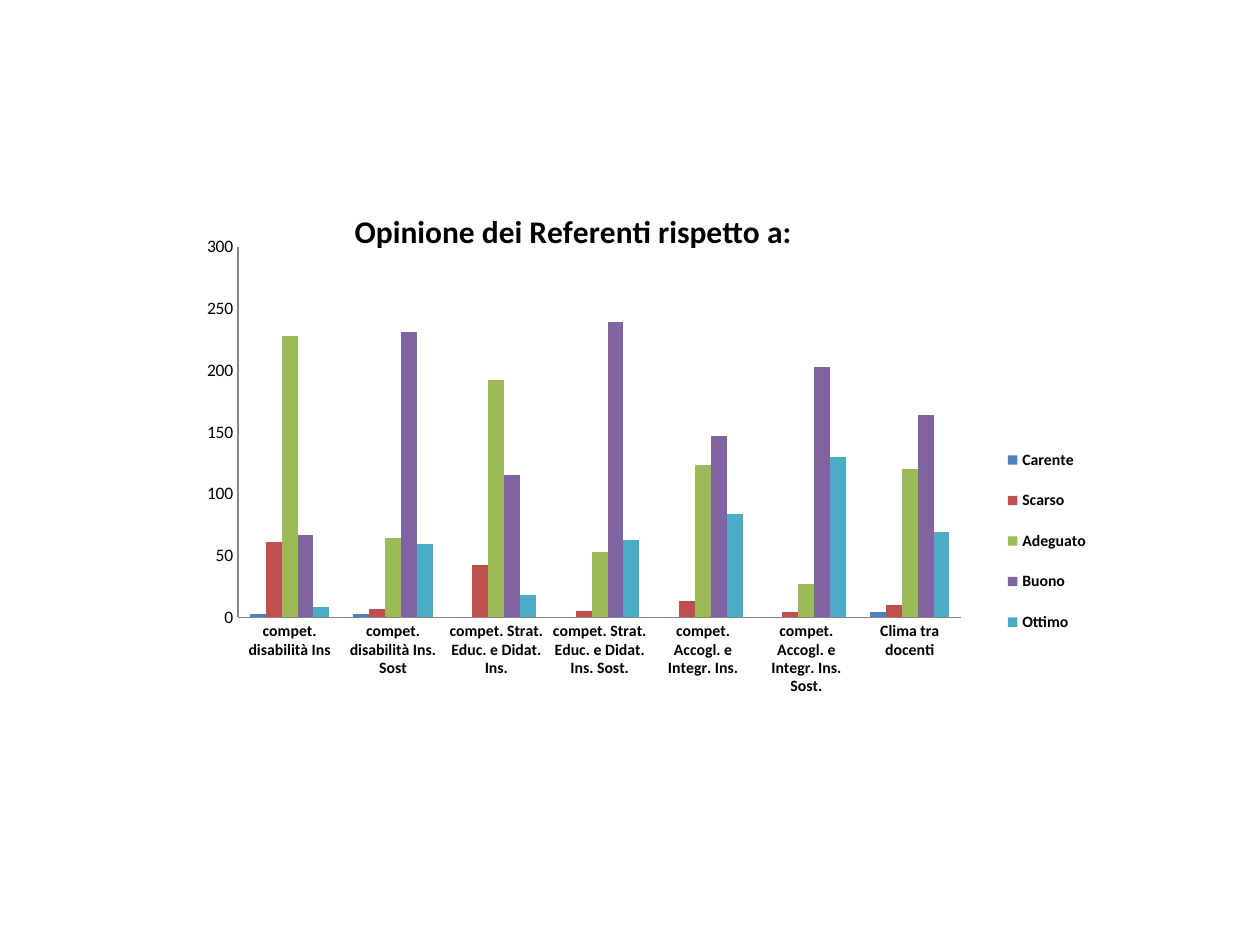
from lxml import etree
from pptx import Presentation
from pptx.chart.data import CategoryChartData
from pptx.dml.color import RGBColor
from pptx.enum.chart import XL_CHART_TYPE, XL_LEGEND_POSITION, XL_TICK_MARK
from pptx.oxml.ns import qn
from pptx.util import Pt

PX = 914400 // 126
COLUMNS = XL_CHART_TYPE.COLUMN_CLUSTERED
RIGHT = XL_LEGEND_POSITION.RIGHT
NO_TICK = XL_TICK_MARK.NONE


def color(value):
    return RGBColor.from_string(value)


def set_layout(element, index, **settings):
    for old_layout in element.findall(qn("c:layout")):
        element.remove(old_layout)
    layout = etree.Element(qn("c:layout"))
    manual = etree.SubElement(layout, qn("c:manualLayout"))
    for name, value in settings.items():
        etree.SubElement(manual, qn(f"c:{name}")).set("val", str(value))
    element.insert(index, layout)


presentation = Presentation()
presentation.slide_width = 1260 * PX
presentation.slide_height = 945 * PX
slide = presentation.slides.add_slide(presentation.slide_layouts[6])

categories = [
    "compet. disabilità Ins",
    "compet. disabilità Ins. Sost",
    "compet. Strat. Educ. e Didat. Ins.",
    "compet. Strat. Educ. e Didat. Ins. Sost.",
    "compet. Accogl. e Integr. Ins.",
    "compet. Accogl. e Integr. Ins. Sost.",
    "Clima tra docenti",
]
ratings = [
    ("Carente", "4F81BD", [3, 3, 0, 0, 0, 0, 4]),
    ("Scarso", "C0504D", [61, 7, 42, 5, 13, 4, 10]),
    ("Adeguato", "9BBB59", [228, 64, 192, 53, 123, 27, 120]),
    ("Buono", "8064A2", [67, 231, 115, 239, 147, 203, 164]),
    ("Ottimo", "4BACC6", [8, 59, 18, 63, 84, 130, 69]),
]
chart_data = CategoryChartData()
chart_data.categories = categories
for name, fill, values in ratings:
    chart_data.add_series(name, values)

chart = slide.shapes.add_chart(
    COLUMNS, 123 * PX, 185 * PX, 983 * PX, 625 * PX, chart_data
).chart
chart.font.name = "Calibri"
chart.font.size = Pt(10)
chart.font.color.rgb = color("000000")

chart.has_title = True
title = chart.chart_title
title.include_in_layout = False
title.text_frame.text = "Opinione dei Referenti rispetto a:"
title_font = title.text_frame.paragraphs[0].font
title_font.name = "Calibri"
title_font.size = Pt(18)
title_font.bold = True
title_font.color.rgb = color("000000")

chart.has_legend = True
legend = chart.legend
legend.position = RIGHT
legend.include_in_layout = False

category_axis = chart.category_axis
value_axis = chart.value_axis
for axis in (category_axis, value_axis):
    axis.has_major_gridlines = False
    axis.major_tick_mark = NO_TICK
    axis.minor_tick_mark = NO_TICK
    axis.format.line.color.rgb = color("868686")
    axis.format.line.width = Pt(0.75)
value_axis.minimum_scale = 0
value_axis.maximum_scale = 300
value_axis.major_unit = 50
value_axis.tick_labels.font.size = Pt(10)
for font in (category_axis.tick_labels.font, legend.font):
    font.name = "Calibri"
    font.size = Pt(9)
    font.bold = True
    font.color.rgb = color("000000")

plot = chart.plots[0]
plot.gap_width = 150
plot.overlap = 0
plot.vary_by_categories = False
for series, (name, fill, values) in zip(plot.series, ratings):
    series.format.fill.solid()
    series.format.fill.fore_color.rgb = color(fill)

chart_space = chart.element
set_layout(chart_space.find(f".//{qn('c:title')}"), 1,
           xMode="edge", yMode="edge", x=0.23, y=0.03)
set_layout(chart_space.find(f".//{qn('c:plotArea')}"), 0,
           layoutTarget="inner", xMode="edge", yMode="edge",
           x=0.117, y=0.099, w=0.736, h=0.593)
set_layout(chart_space.find(f".//{qn('c:legend')}"), 1,
           xMode="edge", yMode="edge", x=0.89, y=0.39, w=0.1, h=0.36)

presentation.save("out.pptx")
